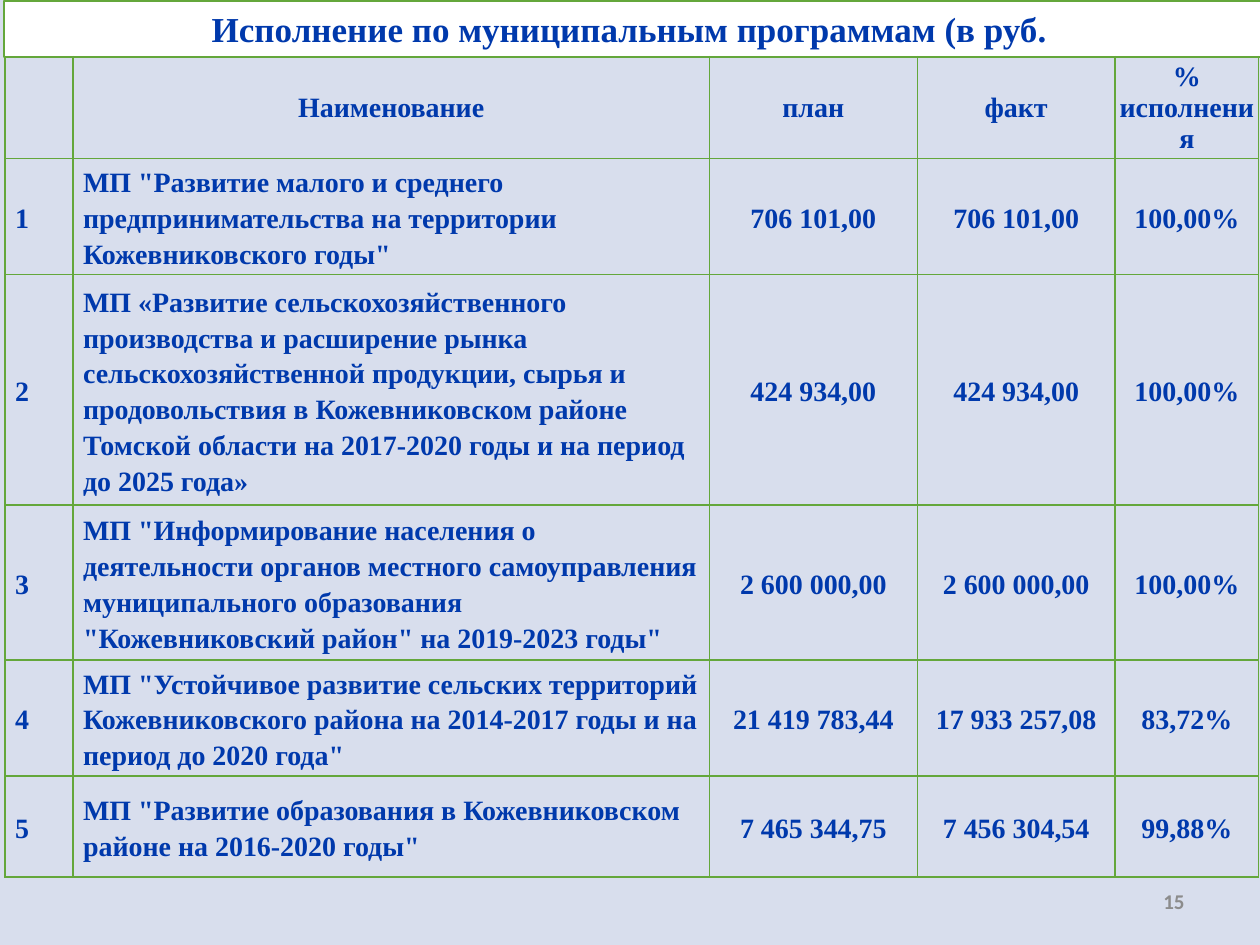
"""Build a slide with a table of municipal programme spending."""
from lxml.etree import SubElement
from pptx import Presentation
from pptx.dml.color import RGBColor
from pptx.enum.text import MSO_ANCHOR, MSO_AUTO_SIZE, PP_ALIGN
from pptx.oxml.ns import qn
from pptx.util import Inches, Pt

COLORS = {"background": "D8DEED", "title": "FFFFFF", "border": "64A73B",
          "text": "0039AC", "number": "8C8C8C"}
COLUMN_WIDTHS = [0.54, 5.05, 1.65, 1.57, 1.14]
ROW_HEIGHTS = [0.81, 0.92, 1.83, 1.23, 0.92, 0.8]
ROWS = [
    ["", "Наименование", "план", "факт", "% исполнения"],
    ["1", 'МП "Развитие малого и среднего предпринимательства на территории '
     'Кожевниковского годы"', "706 101,00", "706 101,00", "100,00%"],
    ["2", "МП «Развитие сельскохозяйственного производства и расширение рынка "
     "сельскохозяйственной продукции, сырья и продовольствия в Кожевниковском районе "
     "Томской области на 2017-2020 годы и на период до 2025 года»",
     "424 934,00", "424 934,00", "100,00%"],
    ["3", 'МП "Информирование населения о деятельности органов местного '
     'самоуправления муниципального образования "Кожевниковский район" '
     'на 2019-2023 годы"', "2 600 000,00", "2 600 000,00", "100,00%"],
    ["4", 'МП "Устойчивое развитие сельских территорий Кожевниковского района '
     'на 2014-2017 годы и на период до 2020 года"',
     "21 419 783,44", "17 933 257,08", "83,72%"],
    ["5", 'МП "Развитие образования в Кожевниковском районе на 2016-2020 годы"',
     "7 465 344,75", "7 456 304,54", "99,88%"],
]


def set_font(para, size, color, name="Times New Roman"):
    """Format all text of a paragraph."""
    para.font.size = Pt(size)
    para.font.name = name
    para.font.bold = True
    para.font.color.rgb = RGBColor.from_string(COLORS[color])


def add_borders(cell):
    """Draw a one-point line on each side of a cell."""
    properties = cell._tc.get_or_add_tcPr()
    for position, side in enumerate(("a:lnL", "a:lnR", "a:lnT", "a:lnB")):
        line = SubElement(properties, qn(side), w=str(Pt(1)))
        fill = SubElement(line, qn("a:solidFill"))
        SubElement(fill, qn("a:srgbClr"), val=COLORS["border"])
        properties.insert(position, line)


deck = Presentation()
deck.slide_width, deck.slide_height = Inches(10), Inches(7.5)
page = deck.slides.add_slide(deck.slide_layouts[5])
page.background.fill.solid()
page.background.fill.fore_color.rgb = RGBColor.from_string(COLORS["background"])

title = page.shapes.title
title.left, title.top = Inches(0.03), Inches(0.01)
title.width, title.height = Inches(10), Inches(0.44)
title.fill.solid()
title.fill.fore_color.rgb = RGBColor.from_string(COLORS["title"])
title.line.color.rgb = RGBColor.from_string(COLORS["border"])
title.line.width = Pt(1.25)
title.text_frame.text = "Исполнение по муниципальным программам (в руб. "
title.text_frame.auto_size = MSO_AUTO_SIZE.NONE
title.text_frame.vertical_anchor = MSO_ANCHOR.MIDDLE
title.text_frame.paragraphs[0].alignment = PP_ALIGN.CENTER
set_font(title.text_frame.paragraphs[0], 20, "text")

frame = page.shapes.add_table(len(ROWS), len(COLUMN_WIDTHS), Inches(0.04), Inches(0.45),
                              Inches(sum(COLUMN_WIDTHS)), Inches(sum(ROW_HEIGHTS)))
table = frame.table
table.first_row = table.horz_banding = False
for column, width in zip(table.columns, COLUMN_WIDTHS):
    column.width = Inches(width)
for row, height in zip(table.rows, ROW_HEIGHTS):
    row.height = Inches(height)
for row_index, values in enumerate(ROWS):
    is_header = row_index == 0
    for column_index, value in enumerate(values):
        cell = table.cell(row_index, column_index)
        cell.text = value
        cell.vertical_anchor = MSO_ANCHOR.MIDDLE
        cell.margin_left = cell.margin_right = Inches(0.01 if is_header else 0.08)
        cell.margin_top = Inches(0.01 if is_header else 0)
        cell.margin_bottom = 0
        cell.fill.background()
        add_borders(cell)
        para = cell.text_frame.paragraphs[0]
        if is_header or column_index > 1:
            para.alignment = PP_ALIGN.CENTER
        if not is_header:
            para.line_spacing = 1.15
        set_font(para, 16, "text")

box = page.shapes.add_textbox(Inches(7.17), Inches(6.95), Inches(2.33), Inches(0.4))
box.text_frame.word_wrap = True
box.text_frame.vertical_anchor = MSO_ANCHOR.MIDDLE
box.text_frame.text = "15"
box.text_frame.paragraphs[0].alignment = PP_ALIGN.RIGHT
set_font(box.text_frame.paragraphs[0], 12, "number", "Calibri")

deck.save("out.pptx")
